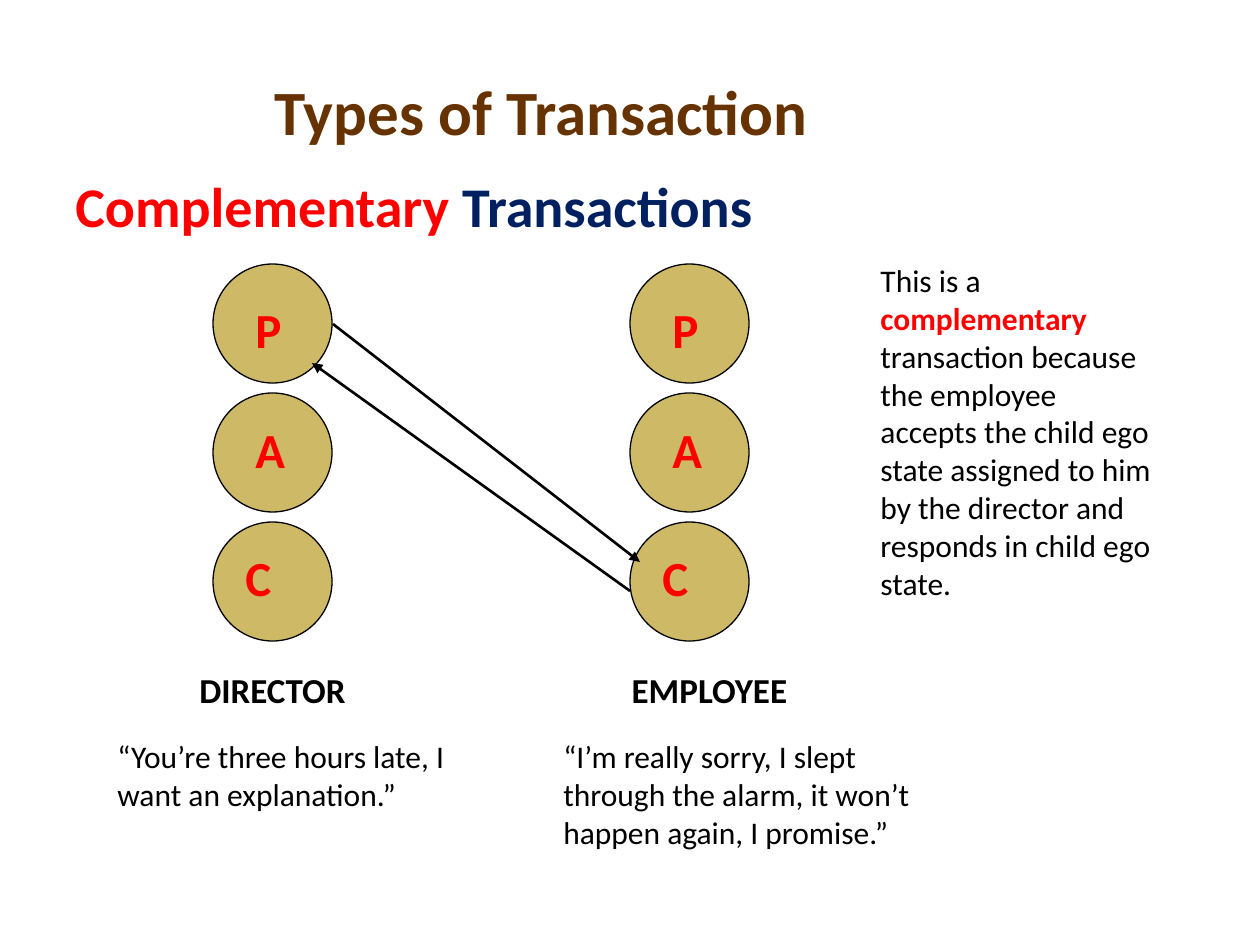
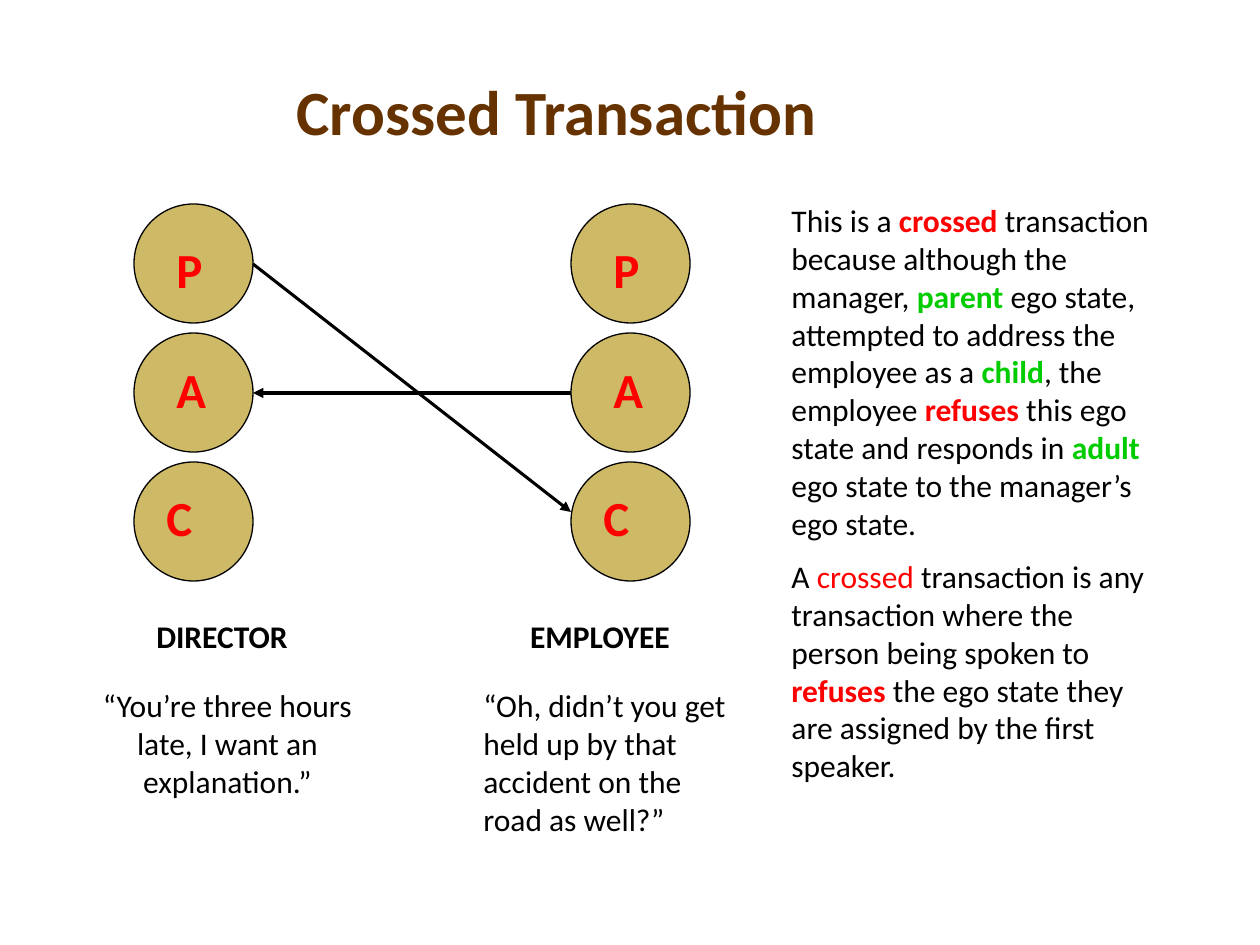
from pptx import Presentation
from pptx.dml.color import RGBColor
from pptx.enum.shapes import MSO_CONNECTOR, MSO_SHAPE
from pptx.enum.text import MSO_ANCHOR, MSO_AUTO_SIZE, PP_ALIGN
from pptx.oxml.ns import qn
from pptx.util import Emu, Pt
from lxml import etree

LEFT, CENTER = PP_ALIGN.LEFT, PP_ALIGN.CENTER
MIDDLE = MSO_ANCHOR.MIDDLE
FIXED, GROW = MSO_AUTO_SIZE.NONE, MSO_AUTO_SIZE.SHAPE_TO_FIT_TEXT
OVAL, LINE = MSO_SHAPE.OVAL, MSO_CONNECTOR.STRAIGHT

SCALE = 914400 / 126  # EMU in one px
FONT = "Calibri"
BLACK, RED, GREEN = "000000", "FF0000", "00CC00"
BROWN, NAVY, GOLD = "663300", "002060", "CEB966"

DISC, PITCH = 119, 129
STATES = [("P", 30, 29), ("A", 30, 149), ("C", 20, 277)]  # letter, offset in column


def px(*vals):
    return [Emu(round(v * SCALE)) for v in vals]


def color(hexa):
    return RGBColor.from_string(hexa)


def style(item, vals):
    for key, val in vals.items():
        setattr(item, key, val)


def write(frame, paras, size, align=LEFT, gap=0):
    """Each paragraph is a list of (text, colour, bold) runs."""
    for i, runs in enumerate(paras):
        para = frame.paragraphs[0] if i == 0 else frame.add_paragraph()
        style(para, {"alignment": align, "space_before": Pt(gap if i else 0)})
        for text, hexa, bold in runs:
            run = para.add_run()
            run.text = text
            style(run.font, {"name": FONT, "size": Pt(size), "bold": bold})
            run.font.color.rgb = color(hexa)


def label(shapes, box, paras, size, align=LEFT, gap=0, fit=GROW):
    frame = shapes.add_textbox(*px(*box)).text_frame
    style(frame, {"word_wrap": True, "auto_size": fit})
    write(frame, paras, size, align, gap)


def start(deck, text, box):
    """Add a slide with its title."""
    slide = deck.slides.add_slide(deck.slide_layouts[5])
    title = slide.shapes.title
    style(title, dict(zip(("left", "top", "width", "height"), px(*box))))
    style(title.text_frame, {"vertical_anchor": MIDDLE, "auto_size": FIXED,
                             "word_wrap": True})
    write(title.text_frame, [[(text, BROWN, True)]], 36)
    return slide


def column(slide, x, y):
    """Stack the three ego states of one person."""
    shapes = slide.shapes.add_group_shape().shapes
    for i in range(len(STATES)):
        disc = shapes.add_shape(OVAL, *px(x, y + i * PITCH, DISC, DISC))
        disc.shadow.inherit = False
        disc.fill.solid()
        disc.fill.fore_color.rgb = color(GOLD)
        disc.line.color.rgb = color(BLACK)
        disc.line.width = Pt(0.75)
    for text, dx, dy in STATES:
        label(shapes, (x + dx, y + dy, 69, 72), [[(text, RED, True)]], 28)


def arrow(slide, ends, weight):
    link = slide.shapes.add_connector(LINE, *px(*ends))
    link.line.color.rgb = color(BLACK)
    link.line.width = Pt(weight)
    props = link._element.spPr
    etree.SubElement(props.find(qn("a:ln")), qn("a:tailEnd"), type="triangle")
    etree.SubElement(props, qn("a:effectLst"))


def diagram(slide, x, y, span, links, weight):
    """Two columns, span apart, with arrows given relative to the corner."""
    for left in (x, x + span):
        column(slide, left, y)
    for x1, y1, x2, y2 in links:
        arrow(slide, (x + x1, y + y1, x + x2, y + y2), weight)


def speaker(slide, box, name, quote, inset, width, size, align=LEFT):
    """A quote box with the name of its speaker above it."""
    x, y = box[:2]
    label(slide.shapes, (x + inset, y - 69, width, 52),
          [[(name, BLACK, True)]], size, CENTER)
    label(slide.shapes, box, [[(quote, BLACK, False)]], 18, align)


def matched(deck):
    slide = start(deck, "Types of Transaction", (262, 66, 935, 89))
    label(slide.shapes, (63, 165, 1134, 679),
          [[("Complementary", RED, True), (" Transactions", NAVY, True)]],
          32, fit=FIXED)
    diagram(slide, 213, 264, 417,
            [(120, 60, 427, 298), (417, 327, 99, 99)], 1.5)
    speaker(slide, (105, 731, 377, 88), "DIRECTOR",
            "“You’re three hours late, I want an explanation.”", 29, 277, 20)
    speaker(slide, (551, 731, 377, 164), "EMPLOYEE",
            "“I’m really sorry, I slept through the alarm, it won’t happen "
            "again, I promise.”", 20, 277, 20)
    label(slide.shapes, (868, 255, 297, 357), [[
        ("This is a ", BLACK, False),
        ("complementary ", RED, True),
        ("transaction because the employee accepts the child ego state "
         "assigned to him by the director and responds in child ego state.",
         BLACK, False)]], 18)


def crossed(deck):
    slide = start(deck, "Crossed Transaction", (284, 76, 913, 69))
    diagram(slide, 134, 204, 437,
            [(119, 60, 437, 308), (437, 189, 119, 189)], 1.75)
    speaker(slide, (84, 680, 287, 126), "DIRECTOR",
            "“You’re three hours late, I want an explanation.”",
            29, 218, 18, CENTER)
    speaker(slide, (471, 680, 287, 165), "EMPLOYEE",
            "“Oh, didn’t you get held up by that accident on the road "
            "as well?”", 20, 218, 18)
    label(slide.shapes, (779, 195, 397, 638), [
        [("This is a ", BLACK, False),
         ("crossed ", RED, True),
         ("transaction because although the manager, ", BLACK, False),
         ("parent", GREEN, True),
         (" ego state, attempted to address the employee as a ", BLACK, False),
         ("child", GREEN, True),
         (", the employee ", BLACK, False),
         ("refuses", RED, True),
         (" this ego state and responds in ", BLACK, False),
         ("adult", GREEN, True),
         (" ego state to the manager’s ego state.", BLACK, False)],
        [("A ", BLACK, False),
         ("crossed", RED, False),
         (" transaction is any transaction where the person being spoken to ",
          BLACK, False),
         ("refuses", RED, True),
         (" the ego state they are assigned by the first speaker.",
          BLACK, False)]], 18, gap=9)


def main():
    deck = Presentation()
    deck.slide_width, deck.slide_height = px(1260, 945)
    matched(deck)
    crossed(deck)
    deck.save("out.pptx")


if __name__ == "__main__":
    main()
